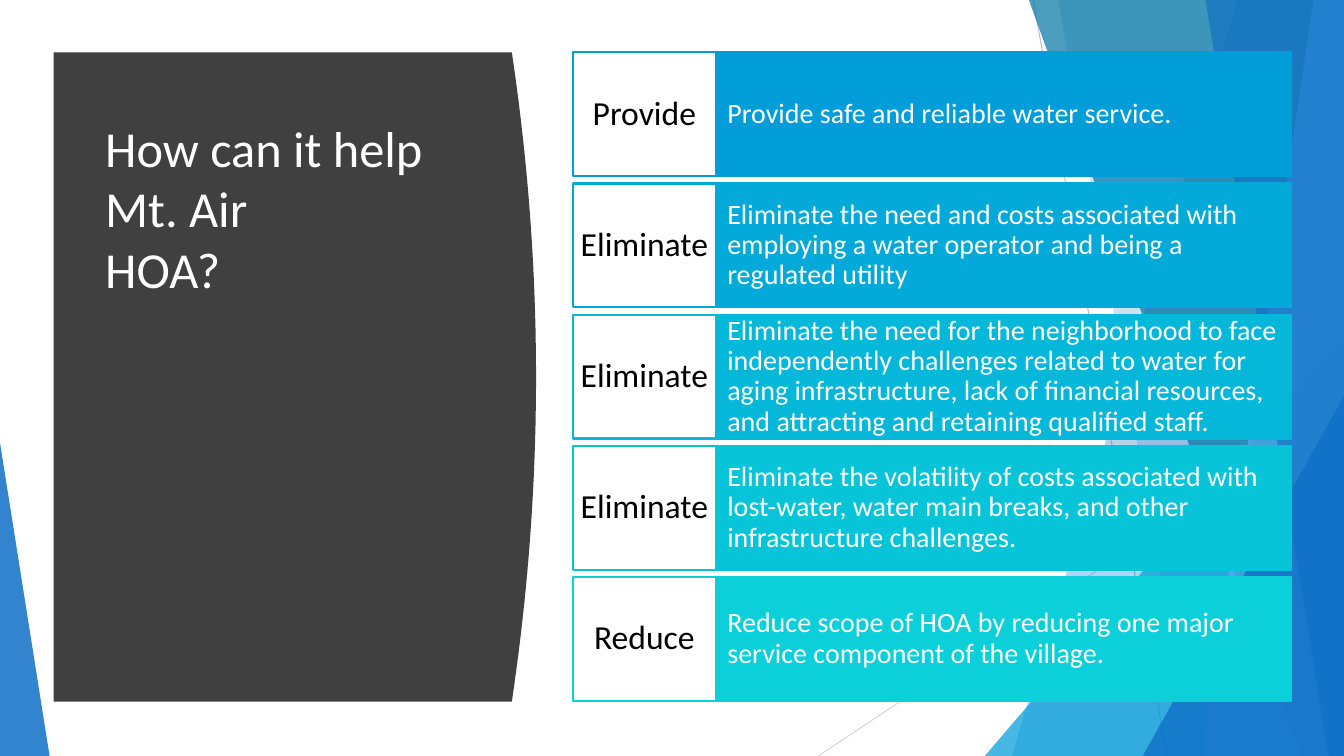
from lxml import etree
from pptx import Presentation
from pptx.dml.color import RGBColor
from pptx.enum.shapes import MSO_CONNECTOR as Connector, MSO_SHAPE as Shape
from pptx.enum.text import MSO_ANCHOR as Anchor, MSO_AUTO_SIZE as AutoSize, PP_ALIGN as Align
from pptx.oxml.ns import qn
from pptx.util import Cm, Pt

SLIDE_WIDTH, SLIDE_HEIGHT = 33.87, 19.05
FONT = "Calibri"
WHITE = RGBColor(0xFF, 0xFF, 0xFF)
BLACK = RGBColor(0x00, 0x00, 0x00)
CHARCOAL = RGBColor(0x40, 0x40, 0x40)
SILVER = RGBColor(0xBF, 0xBF, 0xBF)
PALE_GREY = RGBColor(0xD9, 0xD9, 0xD9)
BLUE = RGBColor(0x0F, 0x6F, 0xC6)
LIGHT_BLUE = RGBColor(0x59, 0xAA, 0xF2)
DARK_TEAL = RGBColor(0x00, 0x76, 0xA3)
CYAN = RGBColor(0x00, 0x9D, 0xD9)
ROW_COLOURS = [
    CYAN,
    RGBColor(0x03, 0xAA, 0xD9),
    RGBColor(0x05, 0xB7, 0xD9),
    RGBColor(0x08, 0xC4, 0xD9),
    RGBColor(0x0B, 0xD0, 0xD9),
]
BENEFITS = [
    ("Provide", "Provide safe and reliable water service."),
    ("Eliminate", "Eliminate the need and costs associated with employing a water operator "
                  "and being a regulated utility"),
    ("Eliminate", "Eliminate the need for the neighborhood to face independently challenges "
                  "related to water for aging infrastructure, lack of financial resources, "
                  "and attracting and retaining qualified staff."),
    ("Eliminate", "Eliminate the volatility of costs associated with lost-water, water main "
                  "breaks, and other infrastructure challenges."),
    ("Reduce", "Reduce scope of HOA by reducing one major service component of the village."),
]


def write_text(shape, text, size, colour, align=Align.LEFT, anchor=Anchor.MIDDLE,
               spacing=1.0, inset_x=0.25, inset_y=0.13):
    frame = shape.text_frame
    frame.word_wrap = True
    frame.auto_size = AutoSize.NONE
    frame.vertical_anchor = anchor
    frame.margin_left = frame.margin_right = Cm(inset_x)
    frame.margin_top = frame.margin_bottom = Cm(inset_y)
    paragraph = frame.paragraphs[0]
    paragraph.text = text
    paragraph.alignment = align
    paragraph.line_spacing = spacing
    for run in paragraph.runs:
        run.font.name = FONT
        run.font.size = Pt(size)
        run.font.color.rgb = colour


def paint(shape, fill, opacity=100, line=None):
    shape.shadow.inherit = False
    shape.fill.solid()
    shape.fill.fore_color.rgb = fill
    if opacity < 100:
        colour = shape.element.spPr.find(qn("a:solidFill"))[0]
        etree.SubElement(colour, qn("a:alpha")).set("val", str(opacity * 1000))
    if line is None:
        shape.line.fill.background()
    else:
        shape.line.color.rgb = line
        shape.line.width = Pt(1.5)


def add_polygon(slide, points):
    corners = [(Cm(x), Cm(y)) for x, y in points]
    builder = slide.shapes.build_freeform(*corners[0])
    builder.add_line_segments(corners[1:], close=True)
    return builder.convert_to_shape()


def add_hairline(slide, start, end, colour):
    line = slide.shapes.add_connector(Connector.STRAIGHT, *map(Cm, start + end))
    line.line.color.rgb = colour
    line.line.width = Pt(0.75)
    etree.SubElement(line.element.spPr, qn("a:effectLst"))


def add_band(slide, top_x, bottom_x, right, bottom, colour, opacity):
    points = [(top_x, 0), (right, 0), (right, bottom), (bottom_x, bottom)]
    paint(add_polygon(slide, points), colour, opacity)


def add_corner(slide, left, top, width, bottom, apex, colour, opacity):
    corner = slide.shapes.add_shape(Shape.ISOSCELES_TRIANGLE, Cm(left), Cm(top),
                                    Cm(width), Cm(bottom - top))
    corner.adjustments[0] = apex
    paint(corner, colour, opacity)


def add_backdrop(slide, right, bottom):
    add_hairline(slide, (26.04, 0), (29.41, bottom), SILVER)
    add_hairline(slide, (right, 10.24), (20.62, bottom), PALE_GREY)
    add_band(slide, 31.19, 25.5, right, bottom, BLUE, 30)
    add_band(slide, 26.67, 30.05, right, bottom, BLUE, 20)
    add_corner(slide, 24.82, 8.46, right - 24.82, bottom, 1, CYAN, 72)
    add_band(slide, 25.93, 32.79, right, bottom, DARK_TEAL, 70)
    add_band(slide, 33.1, 30.28, right, bottom, LIGHT_BLUE, 70)
    add_band(slide, 30.38, 33.48, right, bottom, BLUE, 65)
    add_corner(slide, 28.8, 9.98, right - 28.8, bottom, 1, BLUE, 80)
    add_corner(slide, 0, 11.15, 1.25, bottom, 0, BLUE, 85)


def add_title_panel(slide, left, top, width, height, bulge=0.61, steps=40):
    edge = left + width - bulge
    curve = [(edge + bulge * (1 - (2 * step / steps - 1) ** 2), top + height * step / steps)
             for step in range(steps + 1)]
    panel = add_polygon(slide, [(left, top)] + curve + [(left, top + height)])
    paint(panel, CHARCOAL)

    title = slide.shapes.title
    title.left, title.top = Cm(left + 1.05), Cm(top + 1.5)
    title.width, title.height = Cm(9.5), Cm(height - 3.05)
    write_text(title, "How can it help Mt. Air\nHOA?", 36, WHITE, anchor=Anchor.TOP)
    panel.element.addnext(title.element)


def add_benefit_rows(slide, left, top, width, height, label_width=3.62, gap=0.18):
    row_height = (height - gap * (len(BENEFITS) - 1)) / len(BENEFITS)
    for index, ((label, detail), colour) in enumerate(zip(BENEFITS, ROW_COLOURS)):
        row_top = top + index * (row_height + gap)
        detail_box = slide.shapes.add_shape(
            Shape.RECTANGLE, Cm(left + label_width), Cm(row_top),
            Cm(width - label_width), Cm(row_height))
        paint(detail_box, colour, line=colour)
        write_text(detail_box, detail, 20, WHITE, spacing=0.9, inset_x=0.28, inset_y=0)
        label_box = slide.shapes.add_shape(
            Shape.RECTANGLE, Cm(left), Cm(row_top), Cm(label_width), Cm(row_height))
        paint(label_box, WHITE, line=colour)
        write_text(label_box, label, 24, BLACK, align=Align.CENTER, spacing=0.9,
                   inset_x=0.19, inset_y=0)


def main():
    presentation = Presentation()
    presentation.slide_width = Cm(SLIDE_WIDTH)
    presentation.slide_height = Cm(SLIDE_HEIGHT)
    slide = presentation.slides.add_slide(presentation.slide_layouts[5])
    slide.background.fill.solid()
    slide.background.fill.fore_color.rgb = WHITE
    add_backdrop(slide, SLIDE_WIDTH, SLIDE_HEIGHT)
    add_title_panel(slide, 1.35, 1.32, 12.16, 16.36)
    add_benefit_rows(slide, 14.43, 1.32, 18.1, 16.34)
    presentation.save("out.pptx")


if __name__ == "__main__":
    main()
